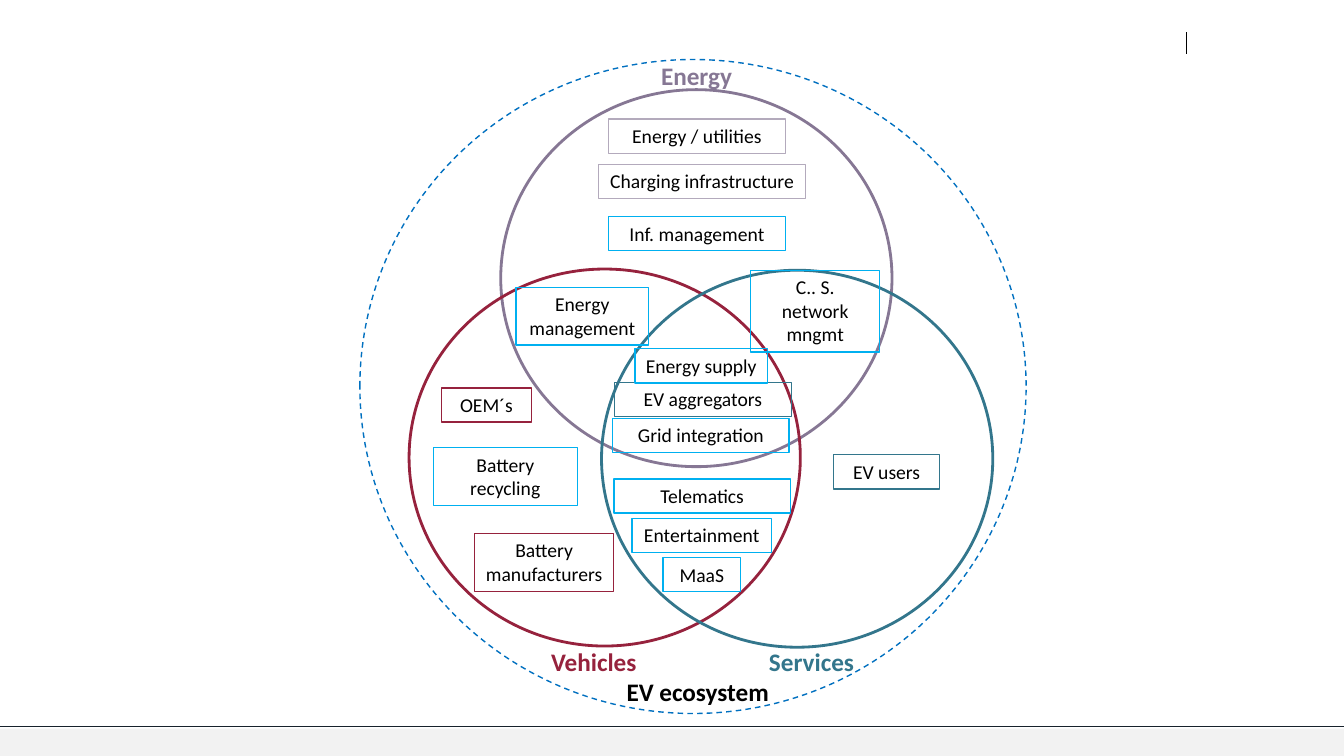
from lxml import etree
from pptx import Presentation
from pptx.dml.color import RGBColor
from pptx.enum import dml, shapes, text
from pptx.oxml import ns
from pptx.util import Cm, Pt

WIDTH, HEIGHT = 33.87, 19.05
PURPLE, RED, TEAL = "867794", "96223D", "33768C"
LILAC, CYAN, BLUE, BLACK = "B3AABC", "00B0F0", "0070C0", "000000"
FOOTER_TOP = 18.36

RULES = [
    ((0, 18.31), (WIDTH, 18.31), "16212B"),
    ((29.9, 0.81), (29.9, 1.35), BLACK),
]
CIRCLES = [
    (9.07, 1.5, 16.79, 16.48, BLUE, 1),
    (12.62, 2.26, 9.86, 9.5, PURPLE, 2),
    (10.31, 6.78, 9.86, 9.5, RED, 2),
    (15.16, 6.81, 9.86, 9.5, TEAL, 2),
]
LABELS = [
    ("Energy", 16.41, 1.4, 2.31, PURPLE),
    ("Vehicles", 13.64, 16.15, 2.67, RED),
    ("Services", 19.13, 16.15, 2.67, TEAL),
    ("EV ecosystem", 15.54, 16.92, 4.11, BLACK),
]
BOXES = [
    ("OEM´s", 11.13, 9.78, 2.26, 1, RED, 1),
    ("Energy / utilities", 15.34, 3, 4.45, 1, LILAC, 0),
    ("Battery manufacturers", 11.96, 13.44, 3.51, 2, RED, 1),
    ("Charging infrastructure", 15.09, 4.14, 5.21, 1, LILAC, 0),
    ("EV users", 21.01, 11.46, 2.67, 1, TEAL, 1),
    ("EV aggregators", 15.49, 9.63, 4.45, 1, TEAL, 0.75),
    ("Inf. management", 15.34, 5.46, 4.45, 1, CYAN, 1),
    ("Energy management", 13, 7.24, 3.35, 2, CYAN, 1),
    ("Grid integration", 15.44, 10.54, 4.45, 1, CYAN, 1),
    ("MaaS", 16.71, 14.05, 1.96, 1, CYAN, 1),
    ("Telematics", 15.47, 12.07, 4.45, 1, CYAN, 1),
    ("C.. S. network mngmt", 18.92, 6.81, 3.25, 3, CYAN, 1),
    ("Energy supply", 16, 8.79, 3.35, 1, CYAN, 1),
    ("Entertainment", 15.93, 13.06, 3.51, 1, CYAN, 1),
    ("Battery recycling", 10.92, 11.28, 3.63, 2, CYAN, 1),
]


def rgb(value):
    return RGBColor.from_string(value)


def add_outline(s, kind, box, color, width):
    sp = s.shapes.add_shape(kind, *map(Cm, box))
    sp.shadow.inherit = False
    sp.fill.background()
    sp.line.color.rgb = rgb(color)
    sp.line.width = Pt(width)
    return sp


def write(sp, content, size=14, color=BLACK, bold=False, wrap=True,
          align=text.PP_ALIGN.CENTER):
    tf = sp.text_frame
    tf.word_wrap = wrap
    tf.auto_size = text.MSO_AUTO_SIZE.SHAPE_TO_FIT_TEXT
    tf.vertical_anchor = text.MSO_ANCHOR.TOP
    p = tf.paragraphs[0]
    p.alignment = align
    r = p.add_run()
    r.text = content
    r.font.name = "Calibri"
    r.font.size = Pt(size)
    r.font.bold = bold
    r.font.color.rgb = rgb(color)


def main():
    prs = Presentation()
    prs.slide_width, prs.slide_height = Cm(WIDTH), Cm(HEIGHT)
    s = prs.slides.add_slide(prs.slide_layouts[6])

    footer = s.shapes.add_shape(shapes.MSO_SHAPE.RECTANGLE, 0, Cm(FOOTER_TOP),
                                Cm(WIDTH), Cm(HEIGHT - FOOTER_TOP))
    footer.shadow.inherit = False
    footer.fill.solid()
    footer.fill.fore_color.rgb = rgb("F2F2F2")
    footer.line.fill.background()

    for start, end, color in RULES:
        rule = s.shapes.add_connector(shapes.MSO_CONNECTOR.STRAIGHT,
                                      *map(Cm, start + end))
        rule.line.color.rgb = rgb(color)
        rule.line.width = Pt(1)
        etree.SubElement(rule._element.spPr, ns.qn("a:effectLst"))

    for *box, color, width in CIRCLES:
        circle = add_outline(s, shapes.MSO_SHAPE.OVAL, box, color, width)
        if color == BLUE:
            circle.line.dash_style = dml.MSO_LINE.DASH

    for content, left, top, width, color in LABELS:
        label = s.shapes.add_textbox(*map(Cm, (left, top, width, 1.02)))
        write(label, content, size=18, color=color, bold=True, wrap=False,
              align=text.PP_ALIGN.LEFT)

    for content, left, top, width, lines, color, weight in BOXES:
        box = (left, top, width, 0.26 + 0.6 * lines)
        sp = add_outline(s, shapes.MSO_SHAPE.RECTANGLE, box, color, weight)
        write(sp, content)

    prs.save("out.pptx")


if __name__ == "__main__":
    main()
